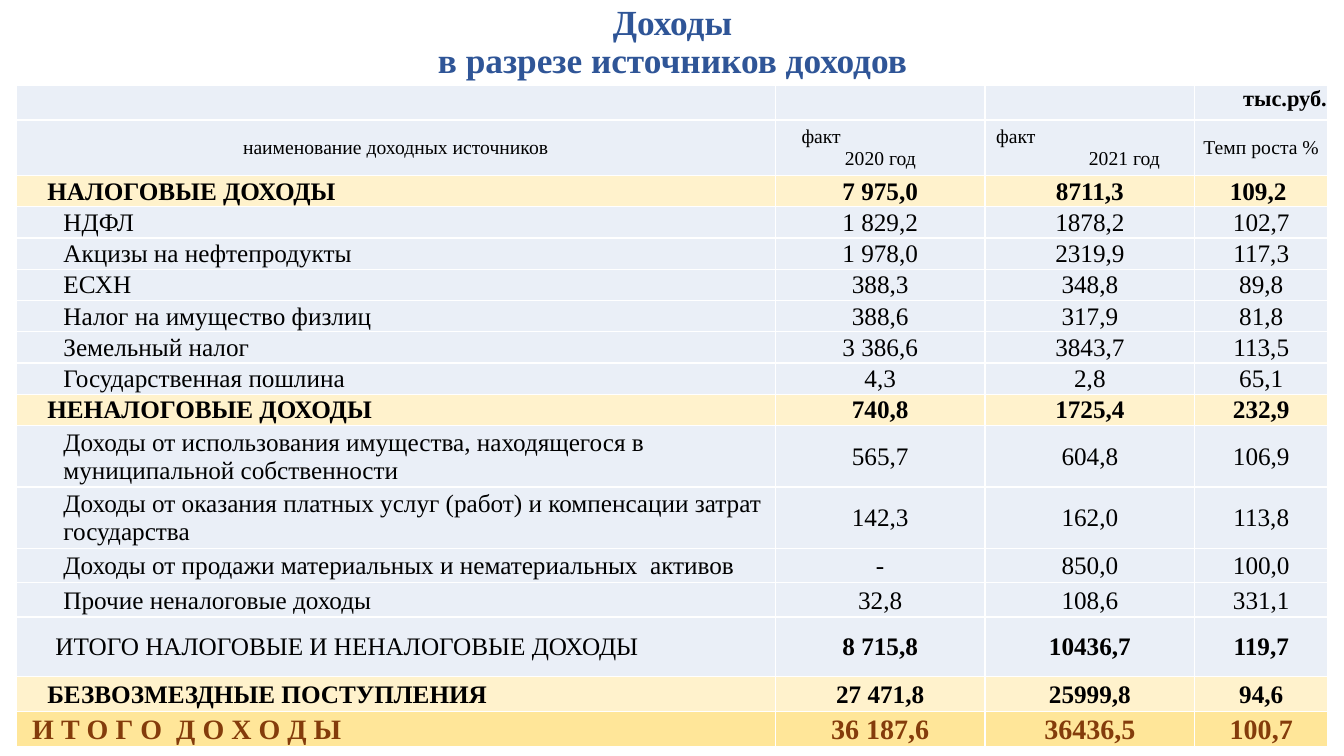
import pptx
import pptx.util
import pptx.dml.color
import pptx.enum.text

Inches = pptx.util.Inches
Align = pptx.enum.text.PP_ALIGN
Anchor = pptx.enum.text.MSO_ANCHOR
inks = {"title": "2F5597", "text": "000000", "total": "843C0B"}
fills = {"head": "EAEFF7", "item": "EAEFF7", "sum": "EAEFF7", "group": "FFF2CC", "total": "FFE699"}
indents = {"item": 0.47, "sum": 0.39, "group": 0.31, "total": 0.16}


def style(para, size, bold, ink, align):
    para.alignment = align
    para.font.name = "Times New Roman"
    para.font.size = pptx.util.Pt(size)
    para.font.bold = bold
    para.font.color.rgb = pptx.dml.color.RGBColor.from_string(inks[ink])


def prepare(cell, kind, left=0.01):
    cell.fill.solid()
    cell.fill.fore_color.rgb = pptx.dml.color.RGBColor.from_string(fills[kind])
    cell.margin_left = Inches(left)
    cell.margin_top = cell.margin_right = Inches(0.01)
    cell.margin_bottom = 0
    cell.vertical_anchor = Anchor.MIDDLE


deck = pptx.Presentation()
deck.slide_width = Inches(13.33)
deck.slide_height = Inches(7.5)
slide = deck.slides.add_slide(deck.slide_layouts[6])

title = slide.shapes.add_textbox(Inches(0.92), 0, Inches(11.5), Inches(0.85)).text_frame
title.word_wrap = True
title.vertical_anchor = Anchor.MIDDLE
title.text = "Доходы\vв разрезе источников доходов"
title.paragraphs[0].line_spacing = 0.9
style(title.paragraphs[0], 25.2, True, "title", Align.CENTER)

rows = [
    ("group", 0.31, "НАЛОГОВЫЕ ДОХОДЫ", "7 975,0", "8711,3", "109,2 "),
    ("item", 0.3, "НДФЛ", "1 829,2", "1878,2", "102,7"),
    ("item", 0.31, "Акцизы на нефтепродукты", "1 978,0", "2319,9", "117,3"),
    ("item", 0.3, "ЕСХН", "388,3", "348,8", "89,8"),
    ("item", 0.31, "Налог на имущество физлиц", "388,6", "317,9", "81,8"),
    ("item", 0.31, "Земельный налог", "3 386,6", "3843,7", "113,5"),
    ("item", 0.31, "Государственная пошлина", "4,3", "2,8", "65,1"),
    ("group", 0.31, "НЕНАЛОГОВЫЕ ДОХОДЫ", "740,8", "1725,4", "232,9"),
    ("item", 0.54, "Доходы от использования имущества, находящегося в муниципальной собственности",
     "565,7", "604,8", "106,9"),
    ("item", 0.59, "Доходы от оказания платных услуг (работ) и компенсации затрат государства",
     "142,3", "162,0", "113,8"),
    ("item", 0.34, "Доходы от продажи материальных и нематериальных  активов", "-", "850,0", "100,0"),
    ("item", 0.34, "Прочие неналоговые доходы", "32,8", "108,6", "331,1"),
    ("sum", 0.59, "ИТОГО НАЛОГОВЫЕ И НЕНАЛОГОВЫЕ ДОХОДЫ", "8 715,8", "10436,7", "119,7"),
    ("group", 0.35, "БЕЗВОЗМЕЗДНЫЕ ПОСТУПЛЕНИЯ", "27 471,8", "25999,8", "94,6"),
    ("total", 0.31, "И Т О Г О  Д О Х О Д Ы", "36 187,6", "36436,5", "100,7"),
]
heights = [0.34, 0.55] + [row[1] for row in rows]
table = slide.shapes.add_table(len(heights), 4, Inches(0.16), Inches(0.85),
                               Inches(13.01), Inches(sum(heights))).table
table.first_row = False
table.horz_banding = False
for col, width in zip(table.columns, (7.53, 2.08, 2.08, 1.32)):
    col.width = Inches(width)
for line, height in zip(table.rows, heights):
    line.height = Inches(height)

for n in range(4):
    prepare(table.cell(0, n), "head")
    prepare(table.cell(1, n), "head")
unit = table.cell(0, 3)
unit.text = "тыс.руб."
unit.vertical_anchor = Anchor.TOP
style(unit.text_frame.paragraphs[0], 16, True, "text", Align.RIGHT)

for n, label in ((0, "наименование доходных источников"), (3, "Темп роста %")):
    cell = table.cell(1, n)
    cell.text = label
    style(cell.text_frame.paragraphs[0], 14, False, "text", Align.CENTER)
for n, year, shifts in ((1, "2020 год", (0.25, 0.68)), (2, "2021 год", (0.1, 1.02))):
    cell = table.cell(1, n)
    cell.text = "факт\n" + year
    for para, shift in zip(cell.text_frame.paragraphs, shifts):
        style(para, 14, False, "text", Align.LEFT)
        para.line_spacing = 1.0
        para._p.get_or_add_pPr().set("marL", str(Inches(shift)))

for r, (kind, height, *texts) in enumerate(rows, 2):
    for n, text in enumerate(texts):
        cell = table.cell(r, n)
        prepare(cell, kind, 0.01 if n else indents[kind])
        cell.text = text
        bold = kind in ("group", "total") or (kind == "sum" and n > 0)
        style(cell.text_frame.paragraphs[0], 20 if kind == "total" else 18, bold,
              "total" if kind == "total" else "text", Align.CENTER if n else Align.LEFT)

deck.save("out.pptx")
